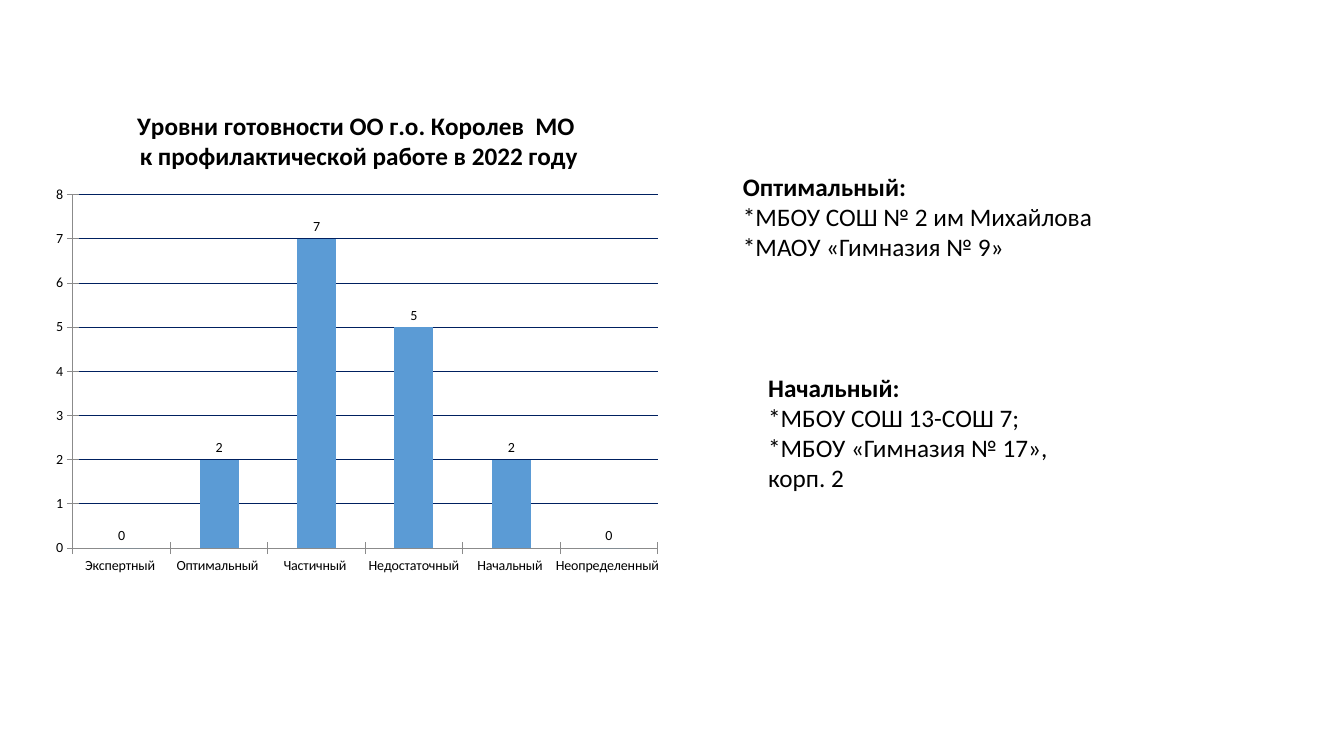
from dataclasses import dataclass

from pptx import Presentation
from pptx.chart.data import CategoryChartData
from pptx.dml.color import RGBColor
from pptx.enum.chart import XL_CHART_TYPE, XL_LABEL_POSITION, XL_TICK_MARK
from pptx.enum.text import MSO_AUTO_SIZE
from pptx.util import Inches, Pt


@dataclass(frozen=True)
class Theme:
    font: str = "Calibri"
    text: RGBColor = RGBColor(0x00, 0x00, 0x00)
    bar: RGBColor = RGBColor(0x5B, 0x9B, 0xD5)
    grid: RGBColor = RGBColor(0x00, 0x20, 0x60)
    axis: RGBColor = RGBColor(0x8B, 0x8B, 0x8B)
    body_size: Pt = Pt(18)
    chart_size: Pt = Pt(10)
    line_width: Pt = Pt(0.75)


def apply_format(target, values):
    for name, value in values.items():
        setattr(target, name, value)


class ReadinessSlide:
    def __init__(self, slide, theme):
        self.slide = slide
        self.theme = theme

    def style_font(self, font, size, bold=False):
        apply_format(font, {"name": self.theme.font, "size": size, "bold": bold})
        font.color.rgb = self.theme.text

    def style_line(self, line, color):
        line.color.rgb = color
        line.width = self.theme.line_width

    def school_list(self, place, level, schools):
        box = self.slide.shapes.add_textbox(*map(Inches, place))
        frame = box.text_frame
        apply_format(frame, {"word_wrap": True, "auto_size": MSO_AUTO_SIZE.SHAPE_TO_FIT_TEXT})
        frame.text = "\n".join([level, *schools])
        for index, paragraph in enumerate(frame.paragraphs):
            self.style_font(paragraph.runs[0].font, self.theme.body_size, index == 0)

    def level_chart(self, place, title, counts):
        chart_data = CategoryChartData()
        chart_data.categories = list(counts)
        chart_data.add_series("Series 1", list(counts.values()))
        chart = self.slide.shapes.add_chart(
            XL_CHART_TYPE.COLUMN_CLUSTERED, *map(Inches, place), chart_data
        ).chart
        apply_format(chart, {"has_legend": False, "has_title": True})
        self.style_font(chart.font, self.theme.chart_size)

        heading = chart.chart_title.text_frame
        heading.text = title
        for paragraph in heading.paragraphs:
            self.style_font(paragraph.runs[0].font, self.theme.body_size, True)

        for axis in (chart.category_axis, chart.value_axis):
            axis.major_tick_mark = XL_TICK_MARK.CROSS
            self.style_line(axis.format.line, self.theme.axis)
        apply_format(
            chart.value_axis,
            {"minimum_scale": 0, "maximum_scale": 8, "major_unit": 1, "has_major_gridlines": True},
        )
        self.style_line(chart.value_axis.major_gridlines.format.line, self.theme.grid)

        plot = chart.plots[0]
        apply_format(plot, {"gap_width": 150, "vary_by_categories": False, "has_data_labels": True})
        apply_format(
            plot.data_labels,
            {"show_value": True, "position": XL_LABEL_POSITION.OUTSIDE_END},
        )
        self.style_font(plot.data_labels.font, self.theme.chart_size)
        bars = plot.series[0].format.fill
        bars.solid()
        bars.fore_color.rgb = self.theme.bar


def main():
    presentation = Presentation()
    apply_format(presentation, {"slide_width": Inches(13.33), "slide_height": Inches(7.5)})
    page = ReadinessSlide(
        presentation.slides.add_slide(presentation.slide_layouts[6]), Theme()
    )
    page.level_chart(
        (0.43, 0.9, 6.26, 4.89),
        "Уровни готовности ОО г.о. Королев  МО \nк профилактической работе в 2022 году",
        {
            "Экспертный ": 0,
            "Оптимальный ": 2,
            "Частичный ": 7,
            "Недостаточный": 5,
            "Начальный ": 2,
            "Неопределенный ": 0,
        },
    )
    page.school_list(
        (7.27, 1.65, 3.95, 1.01),
        "Оптимальный:",
        ["*МБОУ СОШ № 2 им Михайлова", "*МАОУ «Гимназия № 9»"],
    )
    page.school_list(
        (7.52, 3.64, 3.32, 1.31),
        "Начальный:",
        ["*МБОУ СОШ 13-СОШ 7;", "*МБОУ «Гимназия № 17», корп. 2"],
    )
    presentation.save("out.pptx")


if __name__ == "__main__":
    main()
